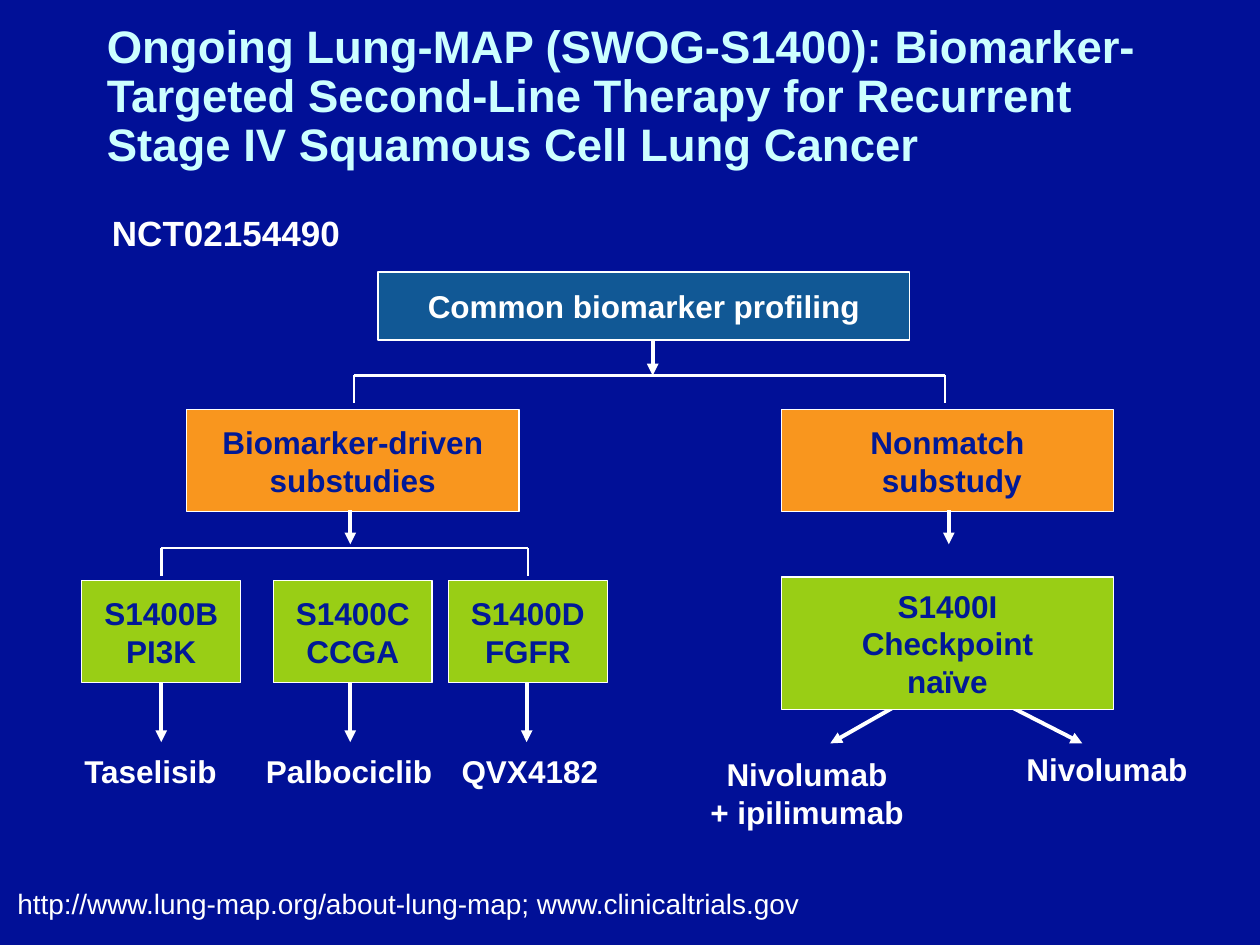
import pptx
import pptx.util
import pptx.dml.color
import pptx.enum.shapes
import pptx.enum.text
import pptx.oxml.ns
from dataclasses import dataclass
from lxml import etree

Inches = pptx.util.Inches
Pt = pptx.util.Pt
ALIGN = pptx.enum.text.PP_ALIGN
ANCHOR = pptx.enum.text.MSO_ANCHOR


@dataclass(frozen=True)
class Theme:
    font: str = "Arial"
    back: str = "011097"
    title: str = "CCFFFF"
    white: str = "FFFFFF"
    ink: str = "011997"
    blue: str = "115895"
    orange: str = "F9961E"
    green: str = "99CE15"
    head: int = 26
    trial: int = 20
    body: int = 18
    foot: int = 16


THEME = Theme()


def rgb(code):
    return pptx.dml.color.RGBColor.from_string(code)


def write(frame, text, size, color, bold=True, align=ALIGN.CENTER,
          anchor=ANCHOR.MIDDLE, wrap=True):
    frame.word_wrap = wrap
    frame.vertical_anchor = anchor
    para = frame.paragraphs[0]
    para.text = text
    para.alignment = align
    for run in para.runs:
        run.font.name = THEME.font
        run.font.size = Pt(size)
        run.font.bold = bold
        run.font.color.rgb = rgb(color)
    return para


def label(slide, area, text, size=THEME.body, color=THEME.white, **style):
    shape = slide.shapes.add_textbox(*map(Inches, area))
    return write(shape.text_frame, text, size, color, **style)


def box(slide, area, text, fill, color=THEME.ink):
    kind = pptx.enum.shapes.MSO_SHAPE.RECTANGLE
    shape = slide.shapes.add_shape(kind, *map(Inches, area))
    shape.shadow.inherit = False
    shape.fill.solid()
    shape.fill.fore_color.rgb = rgb(fill)
    shape.line.color.rgb = rgb(THEME.white)
    shape.line.width = Pt(0.75)
    write(shape.text_frame, text, THEME.body, color)


def line(slide, start, end, width=1.5):
    kind = pptx.enum.shapes.MSO_CONNECTOR.STRAIGHT
    link = slide.shapes.add_connector(kind, *map(Inches, start + end))
    link.line.color.rgb = rgb(THEME.white)
    link.line.width = Pt(width)
    props = link.element.spPr
    etree.SubElement(props, pptx.oxml.ns.qn("a:effectLst"))
    return link


def arrow(slide, start, end):
    link = line(slide, start, end, 2.25)
    stroke = link.element.spPr.find(pptx.oxml.ns.qn("a:ln"))
    tail = etree.SubElement(stroke, pptx.oxml.ns.qn("a:tailEnd"))
    tail.set("type", "triangle")


def fork(slide, left, right, top):
    line(slide, (left, top), (right, top))
    for x in (left, right):
        line(slide, (x, top), (x, top + 0.22))


def main():
    deck = pptx.Presentation()
    deck.slide_width, deck.slide_height = Inches(10), Inches(7.5)
    slide = deck.slides.add_slide(deck.slide_layouts[6])
    slide.background.fill.solid()
    slide.background.fill.fore_color.rgb = rgb(THEME.back)

    # Heading, trial number and sources
    head = label(slide, (0.75, 0.15, 8.5, 1.25),
                 "Ongoing Lung-MAP (SWOG-S1400): Biomarker-Targeted "
                 "Second-Line Therapy for Recurrent Stage IV Squamous "
                 "Cell Lung Cancer",
                 THEME.head, THEME.title, align=ALIGN.LEFT)
    head.line_spacing = 0.9
    label(slide, (0.79, 1.63, 2.03, 0.44), "NCT02154490", THEME.trial,
          align=ALIGN.LEFT, anchor=ANCHOR.TOP, wrap=False)
    label(slide, (0.04, 6.99, 9.78, 0.37),
          "http://www.lung-map.org/about-lung-map; www.clinicaltrials.gov",
          THEME.foot, bold=False, align=ALIGN.LEFT, anchor=ANCHOR.TOP)

    # Profiling splits into two branches
    arrow(slide, (5.18, 2.7), (5.18, 2.98))
    box(slide, (3, 2.16, 4.22, 0.54), "Common biomarker profiling",
        THEME.blue, THEME.white)
    fork(slide, 2.81, 7.5, 2.98)
    for left, mid, text in ((1.48, 2.78, "Biomarker-driven\nsubstudies"),
                            (6.2, 7.53, "Nonmatch\n substudy")):
        box(slide, (left, 3.25, 2.64, 0.81), text, THEME.orange)
        arrow(slide, (mid, 4.05), (mid, 4.32))

    # Biomarker-driven substudies: box left, arrow, box text, drug area
    fork(slide, 1.28, 4.19, 4.35)
    arms = (
        (0.65, 1.28, "S1400B\nPI3K", 0.49, 1.41, "Taselisib"),
        (2.17, 2.78, "S1400C\nCCGA", 1.96, 1.62, "Palbociclib"),
        (3.56, 4.18, "S1400D\nFGFR", 3.5, 1.41, "QVX4182"),
    )
    for left, mid, study, edge, width, drug in arms:
        arrow(slide, (mid, 5.41), (mid, 5.89))
        box(slide, (left, 4.61, 1.26, 0.81), study, THEME.green)
        label(slide, (edge, 5.89, width, 0.45), drug)

    # Nonmatch substudy, with its arrows starting behind the box
    arrow(slide, (7.45, 5.41), (6.59, 5.9))
    arrow(slide, (7.63, 5.41), (8.59, 5.9))
    box(slide, (6.2, 4.58, 2.64, 1.05), "S1400I\nCheckpoint\nnaïve",
        THEME.green)
    label(slide, (5.36, 6.07, 2.09, 0.45), "Nivolumab\n+ ipilimumab")
    label(slide, (7.74, 5.97, 2.09, 0.27), "Nivolumab")

    deck.save("out.pptx")


if __name__ == "__main__":
    main()
